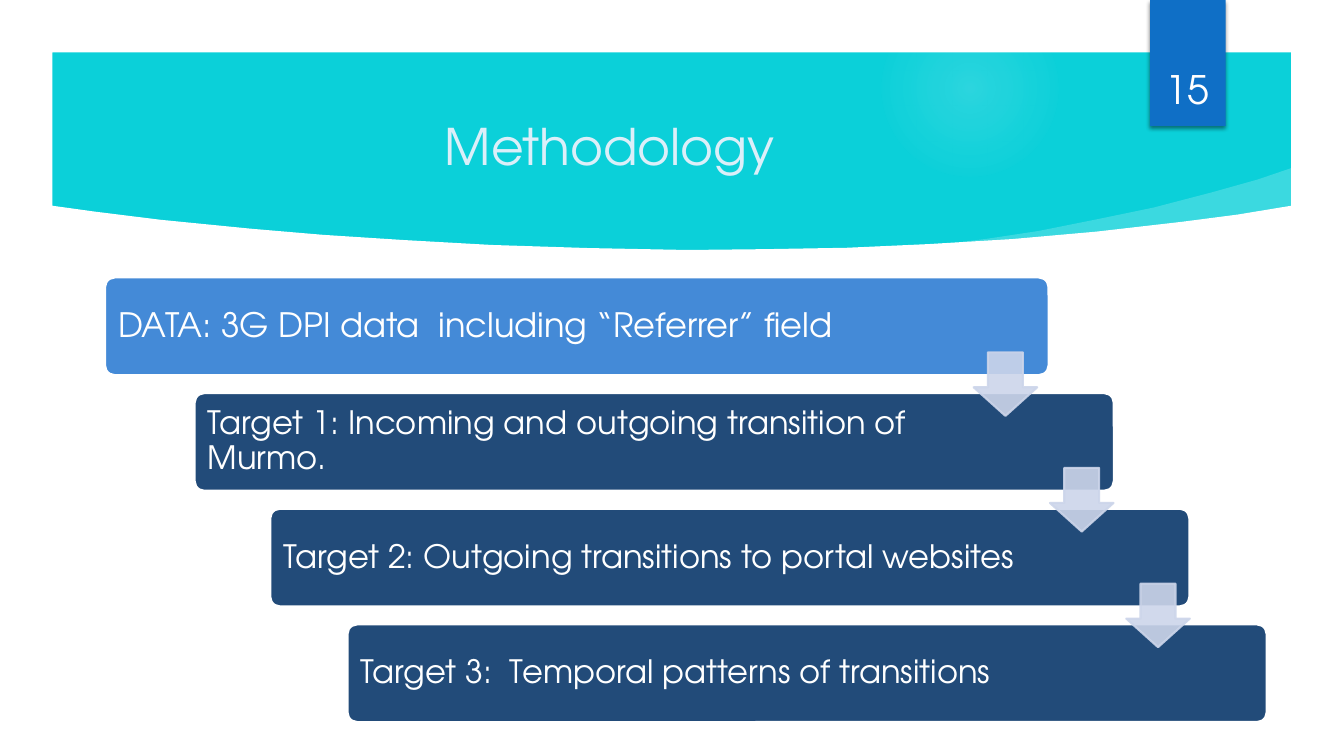
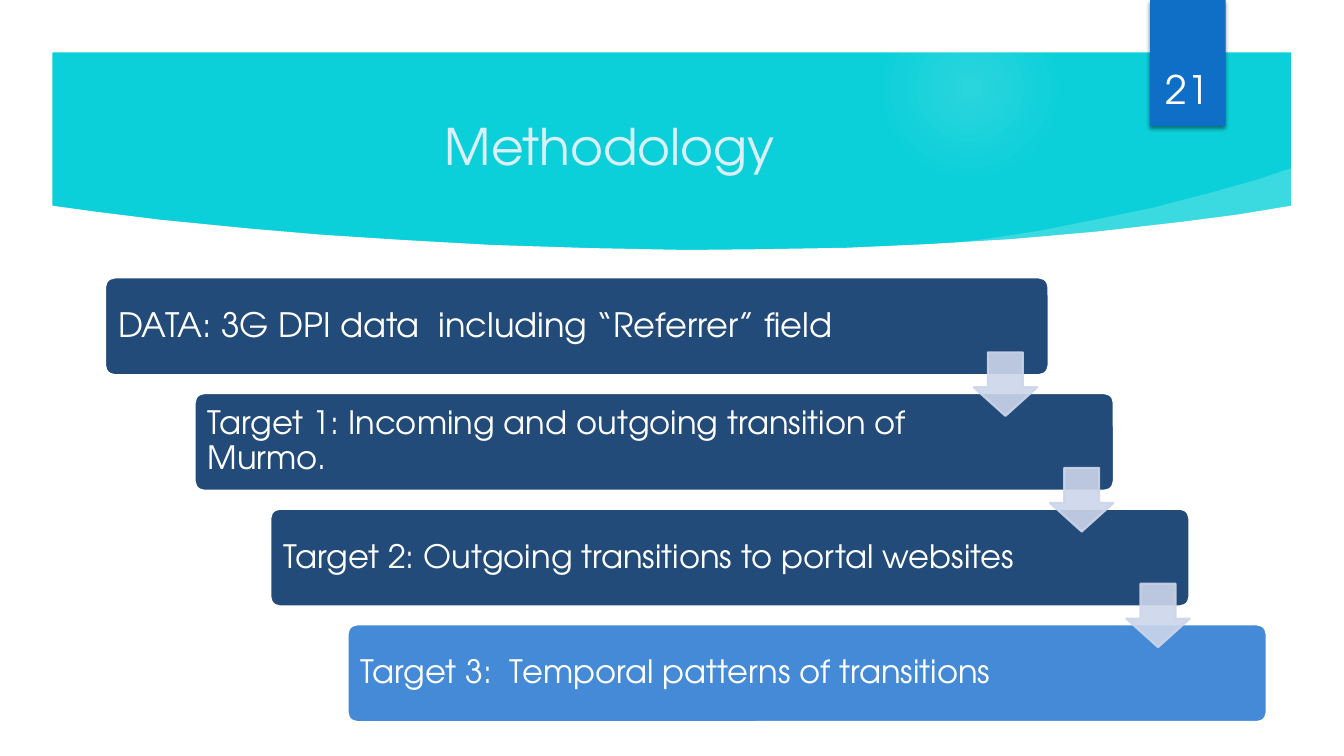
import pptx
import pptx.util
import pptx.dml.color
import pptx.enum.shapes
import pptx.enum.text
import pptx.oxml
import pptx.oxml.ns

Pt = pptx.util.Pt
SHAPE = pptx.enum.shapes.MSO_SHAPE
ALIGN = pptx.enum.text.PP_ALIGN
ANCHOR = pptx.enum.text.MSO_ANCHOR
qn = pptx.oxml.ns.qn
NAMESPACE = pptx.oxml.ns.nsdecls("a")

# Shared look
FONT = "TeX Gyre Adventor"
WHITE = "FFFFFF"
BAND = "0BD0D9"
TAG = "0F6FC6"
TITLE = "DBEFF9"
GLOW = "F1F9FD"
CARD = "224B79"
ACTIVE_CARD = "448AD7"
ARROW = "CCD5EA"

PAGE_WIDTH, PAGE_HEIGHT = 960, 540
BAND_LEFT, BAND_TOP, BAND_RIGHT = 37.4, 37.4, 922.3

# Lower edge of the band, left to right
BAND_CURVE = [
    (BAND_LEFT, 147), (67.7, 151.2), (114.5, 157), (179.3, 163.4),
    (231, 167.8), (288.7, 171.5), (351, 175), (420, 177.2), (491, 178.6),
    (547, 178), (605, 177), (663, 174.4), (723, 170.8), (783, 165.5),
    (844, 158.5), (884, 153.3), (BAND_RIGHT, 147),
]
SWOOSH = [
    (669.6, 175), (705, 170.6), (742, 165), (782, 157), (824, 148.3),
    (865.4, 137.5), (898.6, 128.2), (924, 119.5), (924, 155), (792, 173),
    (672.5, 180),
]

# Cascade: text, left, width, right inset, text size
STEPS = [
    ("DATA: 3G DPI data  including “Referrer” field", 75, 674, 86, 24),
    ("Target 1: Incoming and outgoing transition of Murmo.", 139, 656.6, 107, 23),
    ("Target 2: Outgoing transitions to portal websites", 193, 656.6, 107, 23),
    ("Target 3:  Temporal patterns of transitions", 248.2, 656.6, 107, 23),
]
CARD_TOP, CARD_HEIGHT, CARD_PITCH = 198.2, 69.8, 82.6
ARROW_LEFT, ARROW_TOP, ARROW_SIZE, ARROW_SHIFT = 695.5, 251.7, 45.4, 54.5


def colour(value):
    return pptx.dml.color.RGBColor.from_string(value)


def paint(shape, fill, line=None):
    shape.shadow.inherit = False
    shape.fill.solid()
    shape.fill.fore_color.rgb = colour(fill)
    if line:
        shape.line.color.rgb = colour(line)
        shape.line.width = Pt(1.5)
    else:
        shape.line.fill.background()


def set_opacity(shape, percent):
    for tint in shape.element.spPr.iter(qn("a:srgbClr")):
        tint.append(pptx.oxml.parse_xml(
            f'<a:alpha {NAMESPACE} val="{percent * 1000}"/>'))


def add_shape(page, kind, left, top, width, height, fill, line=None, adjust=()):
    shape = page.shapes.add_shape(kind, Pt(left), Pt(top), Pt(width), Pt(height))
    for index, value in enumerate(adjust):
        shape.adjustments[index] = value
    paint(shape, fill, line)
    return shape


def add_outline(page, contours, fill):
    """Fill closed contours; a second contour cuts a hole in the first."""
    builder = None
    for contour in contours:
        points = [(Pt(x), Pt(y)) for x, y in contour]
        if builder is None:
            builder = page.shapes.build_freeform(*points[0])
        else:
            builder.move_to(*points[0])
        builder.add_line_segments(points[1:], close=True)
    shape = builder.convert_to_shape()
    paint(shape, fill)
    return shape


def write(box, text, size, fill, align, frame_format, spacing=1.0):
    frame = box.text_frame
    for name, value in {"word_wrap": True, **frame_format}.items():
        setattr(frame, name, value)
    para = frame.paragraphs[0]
    para.alignment = align
    para.line_spacing = spacing
    span = para.add_run()
    span.text = text
    for name, value in {"name": FONT, "size": Pt(size)}.items():
        setattr(span.font, name, value)
    span.font.color.rgb = colour(fill)


def add_text(page, left, top, width, height, text, size, fill, anchor):
    box = page.shapes.add_textbox(Pt(left), Pt(top), Pt(width), Pt(height))
    write(box, text, size, fill, ALIGN.CENTER, {"vertical_anchor": anchor})


def add_glow(page):
    glow = add_shape(page, SHAPE.OVAL, 630, 0, 126, 126, GLOW)
    stops = "".join(
        f'<a:gs pos="{position * 1000}"><a:srgbClr val="{GLOW}">'
        f'<a:alpha val="{opacity * 1000}"/></a:srgbClr></a:gs>'
        for position, opacity in [(0, 14), (36, 7), (73, 0), (100, 0)])
    gradient = pptx.oxml.parse_xml(
        f'<a:gradFill {NAMESPACE} rotWithShape="1"><a:gsLst>{stops}</a:gsLst>'
        '<a:path path="circle"><a:fillToRect l="50000" t="50000" r="50000" '
        'b="50000"/></a:path></a:gradFill>')
    properties = glow.element.spPr
    properties.replace(properties.find(qn("a:solidFill")), gradient)


def add_number_tag(page, number):
    tag = add_shape(page, SHAPE.RECTANGLE, 821.5, 0, 54, 90, TAG)
    tag.element.spPr.find(qn("a:effectLst")).append(pptx.oxml.parse_xml(
        f'<a:outerShdw {NAMESPACE} blurRad="{Pt(3)}" dist="{Pt(2)}" '
        'dir="5400000" rotWithShape="0"><a:srgbClr val="000000">'
        '<a:alpha val="45000"/></a:srgbClr></a:outerShdw>'))
    add_text(page, 815, 23, 66.2, 60.5, str(number), 28, WHITE, ANCHOR.BOTTOM)


def add_header(page, title, number):
    # Band decoration, then the white surround that shapes the band
    add_glow(page)
    set_opacity(add_outline(page, [SWOOSH], WHITE), 20)
    border = [(0, 0), (0, PAGE_HEIGHT), (PAGE_WIDTH, PAGE_HEIGHT), (PAGE_WIDTH, 0)]
    opening = [(BAND_LEFT, BAND_TOP), (BAND_RIGHT, BAND_TOP), *reversed(BAND_CURVE)]
    add_outline(page, [border, opening], WHITE)
    add_number_tag(page, number)
    add_text(page, 90.7, 76.3, 689.8, 55.4, title, 36, TITLE, ANCHOR.MIDDLE)


def add_cascade(page, active):
    for index, (text, left, width, inset, size) in enumerate(STEPS):
        fill = ACTIVE_CARD if index == active else CARD
        card = add_shape(page, SHAPE.ROUNDED_RECTANGLE, left,
                         CARD_TOP + index * CARD_PITCH, width, CARD_HEIGHT,
                         fill, WHITE, [0.1])
        write(card, text, size, WHITE, ALIGN.LEFT,
              {"vertical_anchor": ANCHOR.MIDDLE, "margin_left": Pt(7.3),
               "margin_right": Pt(inset)}, 0.9)
    # Arrows lie over the joints between cards
    for index in range(len(STEPS) - 1):
        arrow = add_shape(page, SHAPE.DOWN_ARROW, ARROW_LEFT + index * ARROW_SHIFT,
                          ARROW_TOP + index * CARD_PITCH, ARROW_SIZE, ARROW_SIZE,
                          ARROW, ARROW, [0.55, 0.45])
        set_opacity(arrow, 90)


def main():
    deck = pptx.Presentation()
    deck.slide_width, deck.slide_height = Pt(PAGE_WIDTH), Pt(PAGE_HEIGHT)
    backdrop = deck.slide_master.background.fill
    backdrop.solid()
    backdrop.fore_color.rgb = colour(BAND)
    # Page number and highlighted step of each slide
    for number, active in [(15, 0), (21, 3)]:
        page = deck.slides.add_slide(deck.slide_layouts[6])
        add_header(page, "Methodology", number)
        add_cascade(page, active)
    deck.save("out.pptx")


if __name__ == "__main__":
    main()
